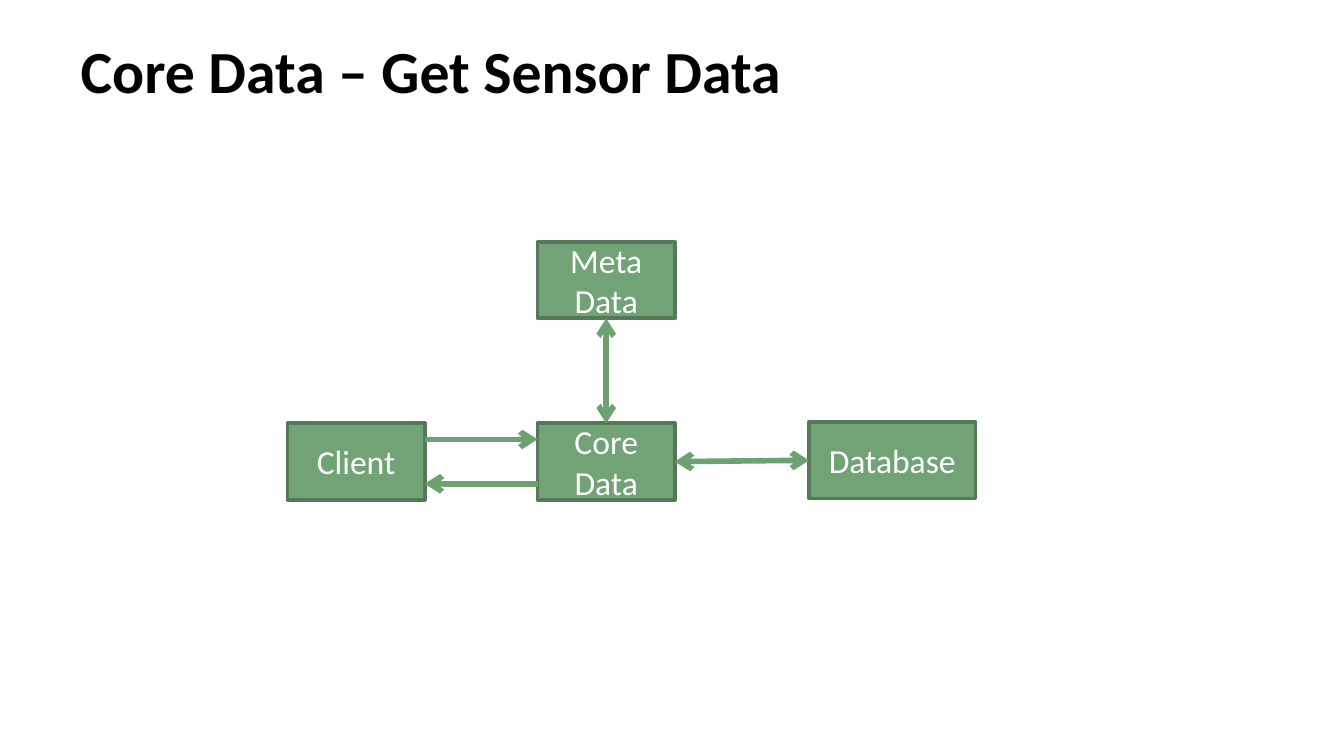
from lxml.etree import SubElement
from pptx import Presentation
from pptx.dml.color import RGBColor
from pptx.enum.shapes import MSO_CONNECTOR, MSO_SHAPE
from pptx.enum.text import MSO_ANCHOR, MSO_AUTO_SIZE, PP_ALIGN
from pptx.oxml.ns import qn
from pptx.util import Pt

TITLE = "Core Data – Get Sensor Data"
BOXES = {
    "client": (["Client"], 154, 226.8, 73.5),
    "core": (["Core", "Data"], 288, 226.8, 73.5),
    "meta": (["Meta", "Data"], 288, 129.6, 73.5),
    "database": (["Database"], 433.4, 226.1, 89.3),
}
BOX_HEIGHT = 41
LEFT, RIGHT, TOP, BOTTOM = (0, 0.5), (1, 0.5), (0.5, 0), (0.5, 1)
HIGH, LOW = 0.21, 0.79
FLOWS = [
    ("client", (1, HIGH), "core", (0, HIGH), ["tailEnd"]),
    ("core", RIGHT, "database", LEFT, ["headEnd", "tailEnd"]),
    ("core", TOP, "meta", BOTTOM, ["headEnd", "tailEnd"]),
    ("core", (0, LOW), "client", (1, LOW), ["tailEnd"]),
]
THEME = {
    "font": "Calibri",
    "title": RGBColor(0x00, 0x00, 0x00),
    "label": RGBColor(0xFF, 0xFF, 0xFF),
    "fill": RGBColor(0x72, 0xA3, 0x76),
    "border": RGBColor(0x54, 0x79, 0x57),
    "arrow": RGBColor(0x6E, 0xA1, 0x72),
    "title_size": 32,
    "label_size": 18,
}


def add_run(paragraph, text, role, bold=False):
    run = paragraph.add_run()
    run.text = text
    run.font.name = THEME["font"]
    run.font.size = Pt(THEME[f"{role}_size"])
    run.font.color.rgb = THEME[role]
    run.font.bold = bold


def set_title(slide):
    title = slide.shapes.title
    title.left, title.top, title.width, title.height = Pt(36), Pt(7.2), Pt(648), Pt(60)
    frame = title.text_frame
    frame.auto_size = MSO_AUTO_SIZE.NONE
    frame.vertical_anchor = MSO_ANCHOR.MIDDLE
    frame.paragraphs[0].alignment = PP_ALIGN.LEFT
    add_run(frame.paragraphs[0], TITLE, "title", bold=True)


def add_box(slide, lines, left, top, width):
    box = slide.shapes.add_shape(
        MSO_SHAPE.RECTANGLE, Pt(left), Pt(top), Pt(width), Pt(BOX_HEIGHT))
    box.shadow.inherit = False
    box.fill.solid()
    box.fill.fore_color.rgb = THEME["fill"]
    box.line.color.rgb = THEME["border"]
    box.line.width = Pt(2)
    frame = box.text_frame
    frame.word_wrap = True
    frame.vertical_anchor = MSO_ANCHOR.MIDDLE
    for index, line in enumerate(lines):
        paragraph = frame.add_paragraph() if index else frame.paragraphs[0]
        paragraph.alignment = PP_ALIGN.CENTER
        add_run(paragraph, line, "label")


def anchor(name, position):
    _, left, top, width = BOXES[name]
    across, down = position
    return Pt(left + across * width), Pt(top + down * BOX_HEIGHT)


def add_flow(slide, source, start, target, end, arrowheads):
    flow = slide.shapes.add_connector(
        MSO_CONNECTOR.STRAIGHT, *anchor(source, start), *anchor(target, end))
    flow.line.color.rgb = THEME["arrow"]
    flow.line.width = Pt(3)
    outline = flow.line._get_or_add_ln()
    for arrowhead in arrowheads:
        SubElement(outline, qn(f"a:{arrowhead}"), type="arrow")
    SubElement(flow._element.spPr, qn("a:effectLst"))


def main():
    deck = Presentation()
    deck.slide_width, deck.slide_height = Pt(720), Pt(405)
    slide = deck.slides.add_slide(deck.slide_layouts[5])
    set_title(slide)
    for box in BOXES.values():
        add_box(slide, *box)
    for flow in FLOWS:
        add_flow(slide, *flow)
    deck.save("out.pptx")


if __name__ == "__main__":
    main()
